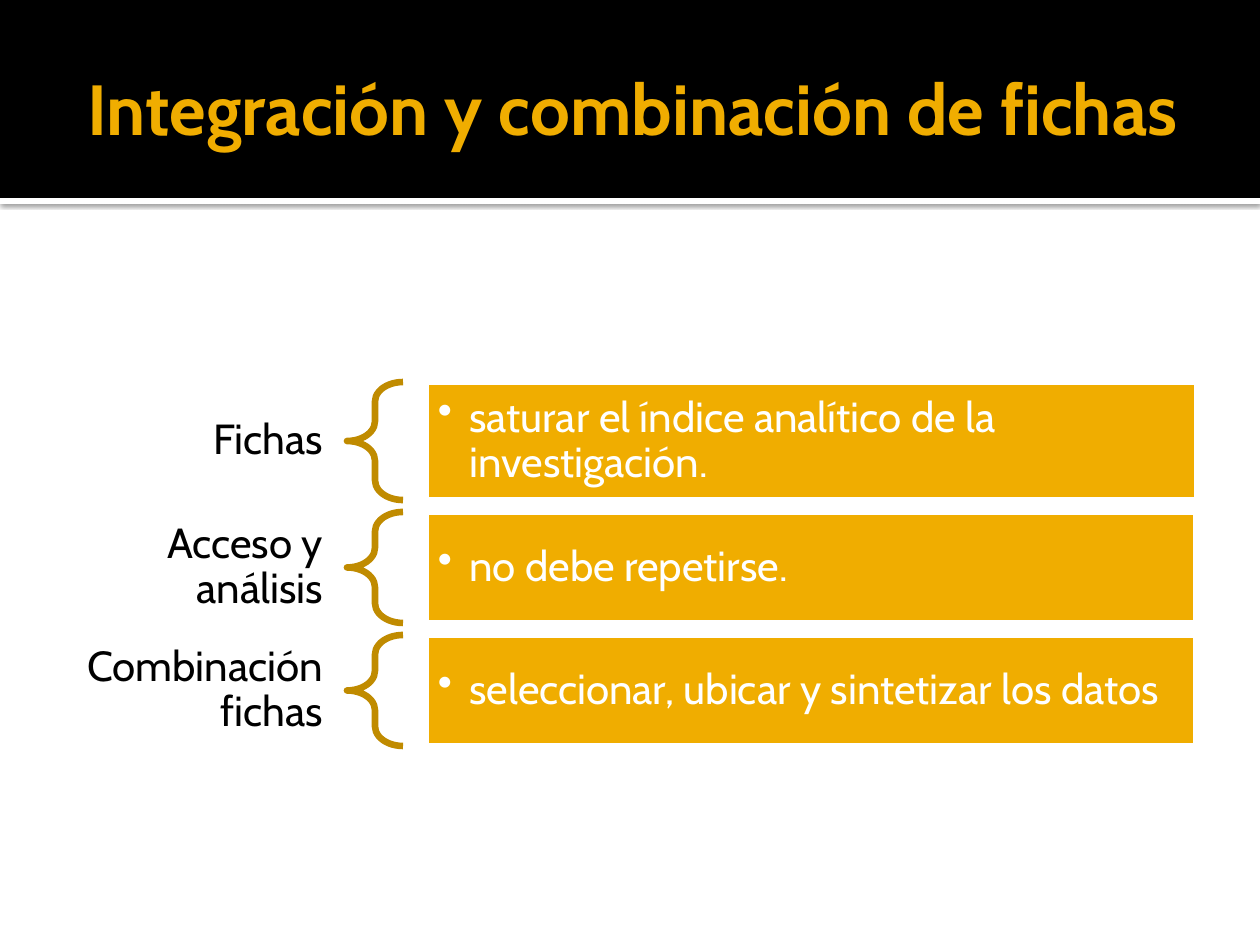
import pptx
import pptx.dml.color
import pptx.enum.shapes
import pptx.enum.text
import pptx.oxml.ns
import pptx.util
from lxml import etree

SCALE = 914400 / 126
FONT = "Cabin"
GOLD, BROWN, WHITE, BLACK = "F0AD00", "C08B00", "FFFFFF", "000000"
KINDS = pptx.enum.shapes.MSO_SHAPE
ALIGN = pptx.enum.text.PP_ALIGN


def px(num):
    return pptx.util.Emu(round(num * SCALE))


def color(code):
    return pptx.dml.color.RGBColor.from_string(code)


def child(node, tag, **attrs):
    return etree.SubElement(node, pptx.oxml.ns.qn(tag), attrs)


def shape(slide, kind, box, fill=None, line=None):
    item = slide.shapes.add_shape(kind, *map(px, box))
    item.shadow.inherit = False
    if fill:
        item.fill.solid()
        item.fill.fore_color.rgb = color(fill)
    else:
        item.fill.background()
    if line:
        item.line.color.rgb = color(line)
        item.line.width = pptx.util.Pt(3.78)
    else:
        item.line.fill.background()
    return item


def shade(item):
    effect = item._element.spPr.find(pptx.oxml.ns.qn("a:effectLst"))
    outer = child(effect, "a:outerShdw", blurRad="31750", dist="10160",
                  dir="5400000", algn="t", rotWithShape="0")
    tint = child(outer, "a:srgbClr", val=BLACK)
    child(tint, "a:alpha", val="60000")


def write(item, text, size, ink, align, pads, bold=False, space=None, dot=False):
    frame = item.text_frame
    frame.word_wrap = True
    frame.vertical_anchor = pptx.enum.text.MSO_ANCHOR.MIDDLE
    (frame.margin_left, frame.margin_top,
     frame.margin_right, frame.margin_bottom) = map(px, pads)
    para = frame.paragraphs[0]
    para.text = text
    para.alignment = align
    if space:
        para.line_spacing = space
    if dot:
        props = para._p.get_or_add_pPr()
        props.set("marL", "228600")
        props.set("indent", "-228600")
        child(props, "a:buChar", char="•")
    para.font.name = FONT
    para.font.size = pptx.util.Pt(size)
    para.font.bold = bold
    para.font.color.rgb = color(ink)


def label(slide, box, text, size, ink, align, pads, **style):
    item = slide.shapes.add_textbox(*map(px, box))
    write(item, text, size, ink, align, pads, **style)


def header(slide, text):
    shade(shape(slide, KINDS.RECTANGLE, (0, 198, 1260, 6), WHITE))
    shape(slide, KINDS.RECTANGLE, (0, 0, 1260, 198), BLACK)
    label(slide, (63, 21, 1134, 173), text, 40.5, GOLD, ALIGN.CENTER,
          (12, 6, 6, 6), bold=True)


def row(slide, top, high, name, tall, text, wide):
    label(slide, (63, top + (high - tall) / 2, 284, tall), name, 24, BLACK,
          ALIGN.RIGHT, (24, 9, 24, 9), space=0.9)
    brace = shape(slide, KINDS.LEFT_BRACE, (347, top, 56, high), line=BROWN)
    brace.adjustments[0] = 0.35
    brace.adjustments[1] = 0.5
    bar = shape(slide, KINDS.RECTANGLE, (426, top, wide, high), GOLD, WHITE)
    write(bar, text, 24, WHITE, ALIGN.LEFT, (12, 12, 12, 12),
          space=0.9, dot=True)


def main():
    deck = pptx.Presentation()
    deck.slide_width, deck.slide_height = px(1260), px(945)
    slide = deck.slides.add_slide(deck.slide_layouts[6])
    header(slide, "Integración y combinación de fichas")
    rows = [
        ("Fichas", 66, "saturar el índice analítico de la investigación.", 118, 771),
        ("Acceso y análisis", 111, "no debe repetirse.", 111, 770),
        ("Combinación fichas", 111, "seleccionar, ubicar y sintetizar los datos", 111, 770),
    ]
    top, gap = 382, 12
    for name, tall, text, high, wide in rows:
        row(slide, top, high, name, tall, text, wide)
        top += high + gap
    deck.save("out.pptx")


if __name__ == "__main__":
    main()
